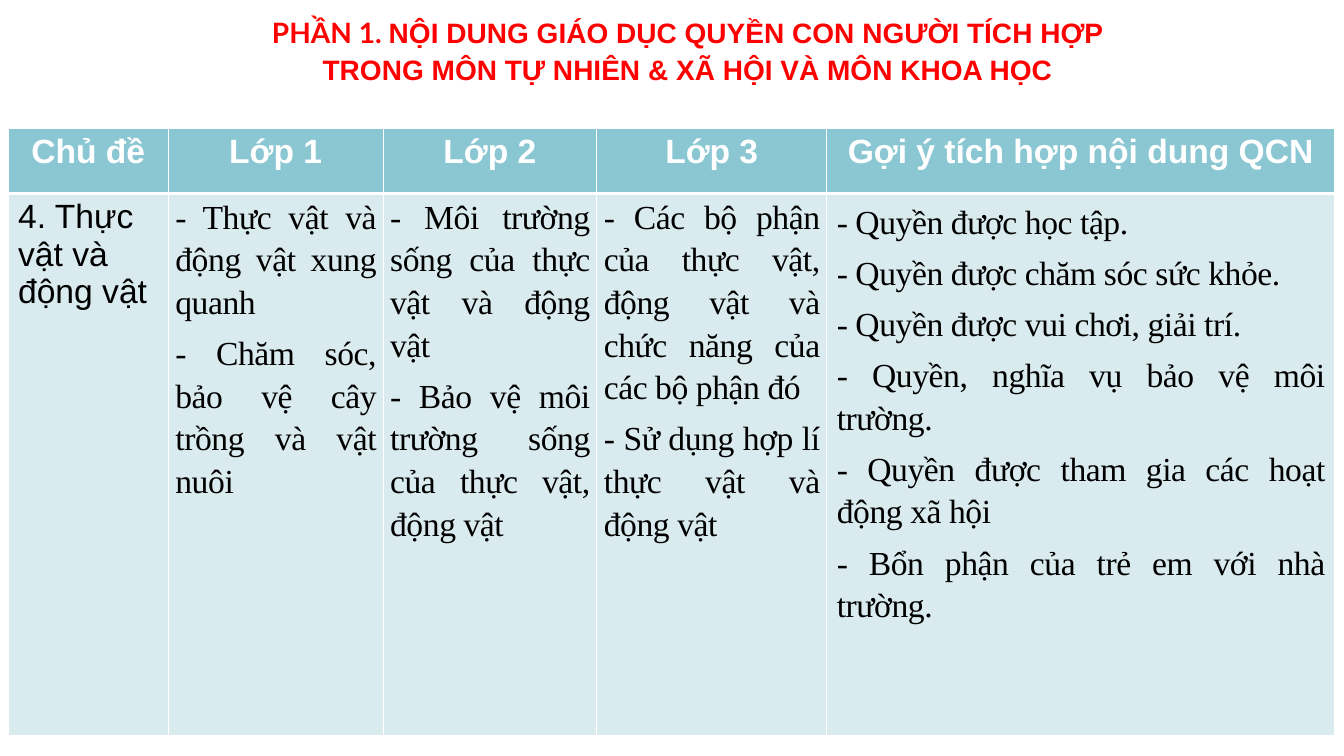
from dataclasses import dataclass

from lxml import etree
from pptx import Presentation
from pptx import util as u
from pptx.dml.color import RGBColor
from pptx.enum import text
from pptx.oxml.ns import qn

PX = 9144


@dataclass(frozen=True)
class Theme:
    red: str = "FF0000"
    white: str = "FFFFFF"
    black: str = "000000"
    header_fill: str = "8AC7D3"
    body_fill: str = "DAEBEF"
    sans: str = "Arial"
    serif: str = "Times New Roman"
    lead: str = "Lato"
    title_size: int = 20
    table_size: int = 24


THEME = Theme()
COLUMN_WIDTHS = [159, 213, 212, 228, 504]
ROW_HEIGHTS = [65, 538]
HEADINGS = ["Chủ đề", "Lớp 1", "Lớp 2", "Lớp 3", "Gợi ý tích hợp nội dung QCN"]
TOPIC = "4. Thực vật và động vật"
GRADES = [
    ["- Thực vật và động vật xung quanh",
     "- Chăm sóc, bảo vệ cây trồng và vật nuôi"],
    ["- Môi trường sống của thực vật và động vật",
     "- Bảo vệ môi trường sống của thực vật, động vật"],
    ["- Các bộ phận của thực vật, động vật và chức năng của các bộ phận đó",
     "- Sử dụng hợp lí thực vật và động vật"],
]
RIGHTS = [
    "- Quyền được học tập.",
    "- Quyền được chăm sóc sức khỏe.",
    "- Quyền được vui chơi, giải trí.",
    "- Quyền, nghĩa vụ bảo vệ môi trường.",
    "- Quyền được tham gia các hoạt động xã hội",
    "- Bổn phận của trẻ em với nhà trường.",
]


def px(length):
    return u.Emu(length * PX)


def set_font(font, face, size, color, bold=False):
    font.name = face
    font.size = u.Pt(size)
    font.bold = bold
    font.color.rgb = RGBColor.from_string(color)


def add_title(slide, left, top, width, height):
    title = slide.shapes.title
    title.left, title.top, title.width, title.height = map(px, (left, top, width, height))
    frame = title.text_frame
    frame.word_wrap = True
    frame.auto_size = text.MSO_AUTO_SIZE.NONE
    frame.vertical_anchor = text.MSO_ANCHOR.TOP
    heading = frame.paragraphs[0]
    heading.alignment = text.PP_ALIGN.CENTER
    heading.line_spacing = 1.1
    heading.space_before = u.Pt(0)
    parts = [
        ("PHẦN 1. ", THEME.lead),
        ("NỘI DUNG GIÁO DỤC QUYỀN CON NGƯỜI TÍCH HỢP "
         "TRONG MÔN TỰ NHIÊN & XÃ HỘI VÀ MÔN KHOA HỌC", THEME.sans),
    ]
    for wording, face in parts:
        part = heading.add_run()
        part.text = wording
        set_font(part.font, face, THEME.title_size, THEME.red, True)


def style_cell(cell, fill, top=1, bottom=1):
    properties = cell._tc.get_or_add_tcPr()
    for side, points in (("L", 1), ("R", 1), ("T", top), ("B", bottom)):
        line = etree.SubElement(properties, qn(f"a:ln{side}"), w=str(u.Pt(points)))
        solid = etree.SubElement(line, qn("a:solidFill"))
        etree.SubElement(solid, qn("a:srgbClr"), val=THEME.white)
    cell.fill.solid()
    cell.fill.fore_color.rgb = RGBColor.from_string(fill)


def fill_points(cell, points):
    frame = cell.text_frame
    for index, wording in enumerate(points):
        point = frame.add_paragraph() if index else frame.paragraphs[0]
        point.alignment = text.PP_ALIGN.JUSTIFY
        point.line_spacing = 1.15
        point.space_before = u.Pt(3 if index else 0)
        point.space_after = u.Pt(3)
        run = point.add_run()
        run.text = wording
        run._r.get_or_add_rPr().set("spc", "-30")
        set_font(point.font, THEME.serif, THEME.table_size, THEME.black)


def add_topic_table(slide, left, top):
    frame = slide.shapes.add_table(
        len(ROW_HEIGHTS), len(COLUMN_WIDTHS), px(left), px(top),
        px(sum(COLUMN_WIDTHS)), px(sum(ROW_HEIGHTS)))
    table = frame.table
    for column, width in zip(table.columns, COLUMN_WIDTHS):
        column.width = px(width)
    for row, height in zip(table.rows, ROW_HEIGHTS):
        row.height = px(height)

    for index, wording in enumerate(HEADINGS):
        header = table.cell(0, index)
        style_cell(header, THEME.header_fill, bottom=3)
        style_cell(table.cell(1, index), THEME.body_fill, top=3)
        heading = header.text_frame.paragraphs[0]
        heading.text = wording
        heading.alignment = text.PP_ALIGN.CENTER
        set_font(heading.font, THEME.sans, THEME.table_size, THEME.white, True)

    topic = table.cell(1, 0).text_frame.paragraphs[0]
    topic.text = TOPIC
    set_font(topic.font, THEME.sans, THEME.table_size, THEME.black)

    for index, points in enumerate(GRADES, 1):
        grade = table.cell(1, index)
        grade.margin_left = grade.margin_right = px(7)
        grade.margin_top = grade.margin_bottom = 0
        fill_points(grade, points)
    fill_points(table.cell(1, len(GRADES) + 1), RIGHTS)


def main():
    deck = Presentation()
    deck.slide_width, deck.slide_height = px(1333), px(750)
    slide = deck.slides.add_slide(deck.slide_layouts[5])
    add_title(slide, 244, 7, 876, 156)
    add_topic_table(slide, 8, 127)
    deck.save("out.pptx")


if __name__ == "__main__":
    main()
